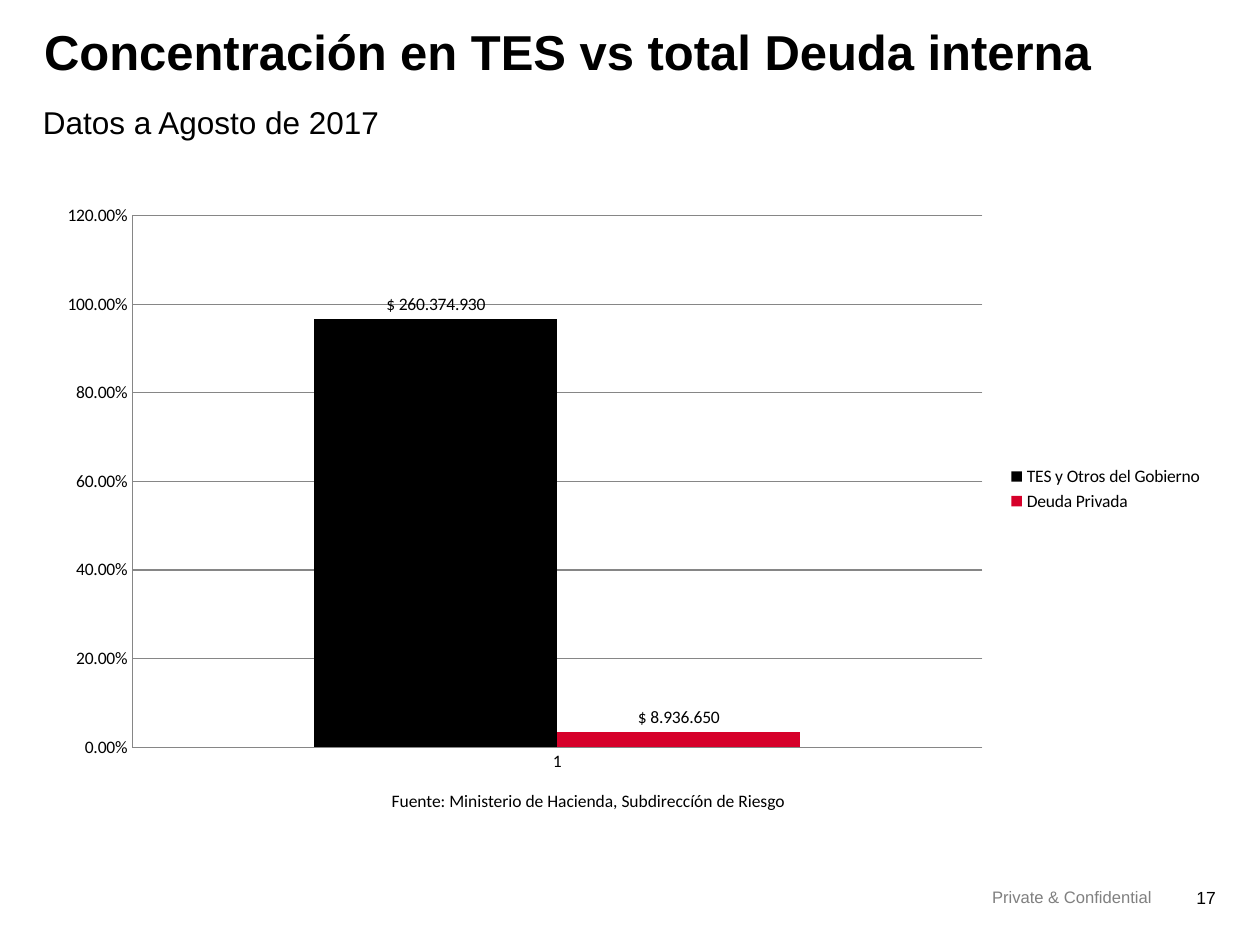
from lxml.etree import SubElement
from pptx import Presentation
from pptx.chart.data import CategoryChartData
from pptx.dml.color import RGBColor
from pptx.enum.chart import XL_CHART_TYPE as ChartType
from pptx.enum.chart import XL_LABEL_POSITION as LabelPosition
from pptx.enum.chart import XL_LEGEND_POSITION as LegendPosition
from pptx.enum.chart import XL_TICK_MARK as TickMark
from pptx.enum.text import MSO_ANCHOR, MSO_AUTO_SIZE, PP_ALIGN
from pptx.oxml.ns import qn
from pptx.util import Inches, Pt

COLORS = {"black": "000000", "red": "D6002A", "footer": "808080", "axis": "868686"}


def style_font(font, size, color="black", name="Arial", bold=False):
    font.size = Pt(size)
    font.name = name
    font.bold = bold
    font.color.rgb = RGBColor.from_string(COLORS[color])


def fill_text(box, text, size, color="black", bold=False, align=PP_ALIGN.LEFT):
    """Put one top-anchored Arial line in a box without insets."""
    frame = box.text_frame
    frame.word_wrap = True
    frame.auto_size = MSO_AUTO_SIZE.NONE
    frame.vertical_anchor = MSO_ANCHOR.TOP
    frame.margin_left = frame.margin_right = frame.margin_top = frame.margin_bottom = 0
    para = frame.paragraphs[0]
    para.alignment = align
    para.space_before = Pt(0)
    span = para.add_run()
    span.text = text
    style_font(span.font, size, color, bold=bold)
    return para


deck = Presentation()
deck.slide_width, deck.slide_height = Inches(10), Inches(7.5)
page = deck.slides.add_slide(deck.slide_layouts[1])

# Title and subtitle
title, subtitle = page.placeholders
title.left, title.top = Inches(0.35), Inches(0.24)
title.width, title.height = Inches(8.88), Inches(0.87)
para = fill_text(title, "Concentración en TES vs total Deuda interna", 28, bold=True)
para.line_spacing = 0.85

subtitle.left, subtitle.top = Inches(0.34), Inches(0.82)
subtitle.width, subtitle.height = Inches(8.88), Inches(0.48)
para = fill_text(subtitle, "Datos a Agosto de 2017", 18)
properties = para._p.get_or_add_pPr()
properties.set("marL", "0")
properties.set("indent", "0")
SubElement(properties, qn("a:buNone"))

# Footer and page number
footer = page.shapes.add_textbox(Inches(5.94), Inches(7.04), Inches(3.2), Inches(0.24))
fill_text(footer, "Private & Confidential", 9.5, "footer", align=PP_ALIGN.RIGHT)
number = page.shapes.add_textbox(Inches(9.42), Inches(7.04), Inches(0.23), Inches(0.28))
fill_text(number, "17", 10, align=PP_ALIGN.RIGHT)

# Source note
note = page.shapes.add_textbox(Inches(3.01), Inches(6.22), Inches(3.4), Inches(0.27))
note.text_frame.word_wrap = False
note.text_frame.auto_size = MSO_AUTO_SIZE.SHAPE_TO_FIT_TEXT
span = note.text_frame.paragraphs[0].add_run()
span.text = "Fuente: Ministerio de Hacienda, Subdireccíón de Riesgo"
style_font(span.font, 10, name="Calibri")

# Debt shares, labelled with their amounts
debts = [
    ("TES y Otros del Gobierno", 0.9668, "black", "$ 260.374.930"),
    ("Deuda Privada", 0.0332, "red", "$ 8.936.650"),
]
data = CategoryChartData(number_format="0.00%")
data.categories = ["1"]
for name, share, color, amount in debts:
    data.add_series(name, [share])
chart = page.shapes.add_chart(
    ChartType.COLUMN_CLUSTERED, Inches(0.35), Inches(1.54), Inches(9.3), Inches(4.68), data
).chart
style_font(chart.font, 10, name="Calibri")
chart.has_title = False
chart.has_legend = True
chart.legend.position = LegendPosition.RIGHT
chart.legend.include_in_layout = False

values = chart.value_axis
values.minimum_scale, values.maximum_scale, values.major_unit = 0, 1.2, 0.2
values.has_major_gridlines = True
values.tick_labels.number_format = "0.00%"
values.tick_labels.number_format_is_linked = False
for axis in (values, chart.category_axis):
    axis.major_tick_mark = axis.minor_tick_mark = TickMark.NONE
for lines in (values.format, chart.category_axis.format, values.major_gridlines.format):
    lines.line.width = Pt(0.75)
    lines.line.color.rgb = RGBColor.from_string(COLORS["axis"])

plot = chart.plots[0]
plot.gap_width = 150
plot.overlap = 0
plot.vary_by_categories = False
for series, (name, share, color, amount) in zip(plot.series, debts):
    series.format.fill.solid()
    series.format.fill.fore_color.rgb = RGBColor.from_string(COLORS[color])
    labels = series.data_labels
    labels.show_value = True
    labels.number_format = "0.00%"
    labels.number_format_is_linked = False
    labels.position = LabelPosition.OUTSIDE_END
    label = series.points[0].data_label
    span = label.text_frame.paragraphs[0].add_run()
    span.text = amount
    style_font(span.font, 10, name="Calibri")
    label.position = LabelPosition.OUTSIDE_END

deck.save("out.pptx")
